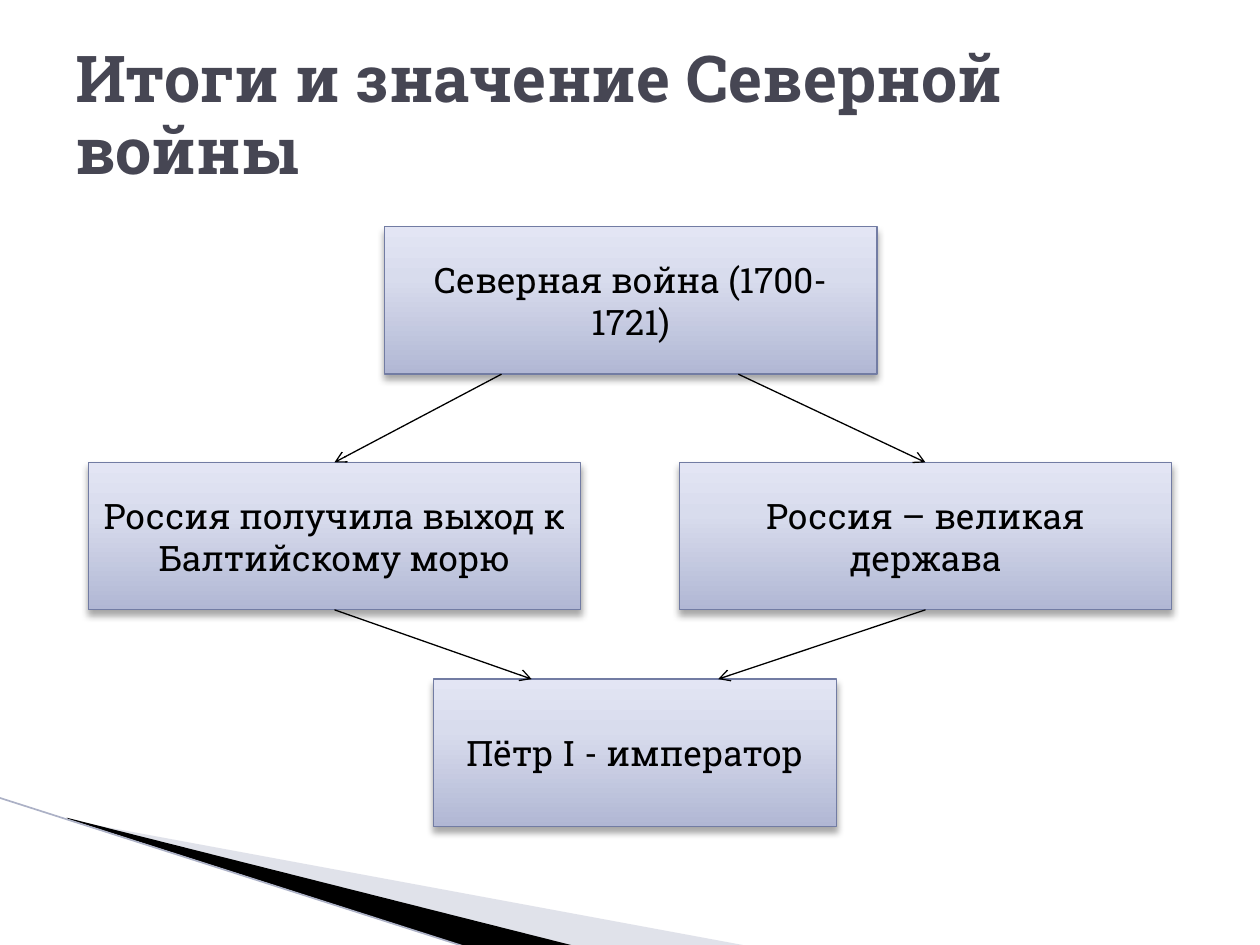
from lxml.etree import SubElement
from copy import deepcopy
from pptx import Presentation
from pptx.dml.color import RGBColor
from pptx.enum.shapes import MSO_CONNECTOR
from pptx.enum.text import MSO_ANCHOR, PP_ALIGN
from pptx.oxml.ns import qn
from pptx.util import Inches, Pt

FONT = "Roboto Slab"


def rgb(value):
    return RGBColor.from_string(value)


def add_line(start, end, color, width):
    line = slide.shapes.add_connector(
        MSO_CONNECTOR.STRAIGHT, *(Inches(v) for v in (*start, *end)))
    line.line.color.rgb = rgb(color)
    line.line.width = Pt(width)
    SubElement(line._element.spPr, qn("a:effectLst"))
    return line


presentation = Presentation()
presentation.slide_width = Inches(10)
presentation.slide_height = Inches(7.5)
slide = presentation.slides.add_slide(presentation.slide_layouts[6])

wedges = [
    ([(0.55, 6.51), (5.95, 7.51), (4.56, 7.51), (0.55, 6.5)], "B3B7CB", 40),
    ([(0.53, 6.49), (4.57, 7.51), (3.72, 7.52), (0.54, 6.5)], "000000", 100),
]
for points, color, opacity in wedges:
    corners = [(Inches(x), Inches(y)) for x, y in points]
    builder = slide.shapes.build_freeform(*corners[0], scale=1.0)
    builder.add_line_segments(corners[1:], close=True)
    wedge = builder.convert_to_shape()
    wedge.shadow.inherit = False
    wedge.fill.solid()
    wedge.fill.fore_color.rgb = rgb(color)
    wedge.line.fill.background()
    if opacity < 100:
        wedge_color = wedge._element.spPr.find(".//" + qn("a:srgbClr"))
        SubElement(wedge_color, qn("a:alpha"), val=str(opacity * 1000))
add_line((-0.01, 6.33), (3.71, 7.52), "ACB1C6", 0.95)

title = slide.shapes.add_textbox(Inches(0.5), Inches(0.3), Inches(9), Inches(1.25))
title.text_frame.word_wrap = True
title.text_frame.vertical_anchor = MSO_ANCHOR.MIDDLE
heading = title.text_frame.paragraphs[0]
heading.text = "Итоги и значение Северной войны"
heading.line_spacing = 0.94
heading.font.name = FONT
heading.font.size = Pt(36.9)
heading.font.bold = True
heading.font.color.rgb = rgb("464653")

events = [
    ("Северная война (1700-1721)", 3.05, 1.8, 3.91),
    ("Пётр I - император", 3.44, 5.39, 3.2),
    ("Россия получила выход к Балтийскому морю", 0.7, 3.67, 3.91),
    ("Россия – великая держава", 5.39, 3.67, 3.91),
]
boxes = []
for text, left, top, width in events:
    box = slide.shapes.add_shape(
        1, Inches(left), Inches(top), Inches(width), Inches(1.17))
    box.fill.gradient()
    box.fill.gradient_angle = 90
    stops = box.fill.gradient_stops
    for stop, color, position in zip(stops, ("B1B7D4", "D8DCED"), (0, 0.65)):
        stop.color.rgb = rgb(color)
        stop.position = position
    middle = box._element.spPr.findall(".//" + qn("a:gs"))[1]
    middle.addnext(deepcopy(middle))
    lightest = box.fill.gradient_stops[2]
    lightest.color.rgb = rgb("E3E5F4")
    lightest.position = 1
    box.line.color.rgb = rgb("727CA3")
    box.line.width = Pt(0.75)

    box.shadow.inherit = False
    effects = box._element.spPr.find(qn("a:effectLst"))
    shadow = SubElement(effects, qn("a:outerShdw"), blurRad=str(Pt(4)),
                        dist=str(Pt(3)), dir="5400000", rotWithShape="0")
    shadow_color = SubElement(shadow, qn("a:srgbClr"), val="000000")
    SubElement(shadow_color, qn("a:alpha"), val="35000")

    box.text_frame.word_wrap = True
    box.text_frame.vertical_anchor = MSO_ANCHOR.MIDDLE
    caption = box.text_frame.paragraphs[0]
    caption.text = text
    caption.alignment = PP_ALIGN.CENTER
    caption.font.name = FONT
    caption.font.size = Pt(20)
    caption.font.color.rgb = rgb("000000")
    boxes.append(box)

war, emperor, sea_access, great_power = boxes
arrows = [
    ((3.98, 2.97), (2.66, 3.67), None, sea_access),
    ((5.86, 2.97), (7.34, 3.67), None, great_power),
    ((2.66, 4.84), (4.22, 5.39), sea_access, None),
    ((7.34, 4.84), (5.7, 5.39), great_power, None),
]
for start, end, source, target in arrows:
    arrow = add_line(start, end, "000000", 0.75)
    if source:
        arrow.begin_connect(source, 2)
    if target:
        arrow.end_connect(target, 0)
    SubElement(arrow.line._get_or_add_ln(), qn("a:tailEnd"), type="arrow")

presentation.save("out.pptx")
